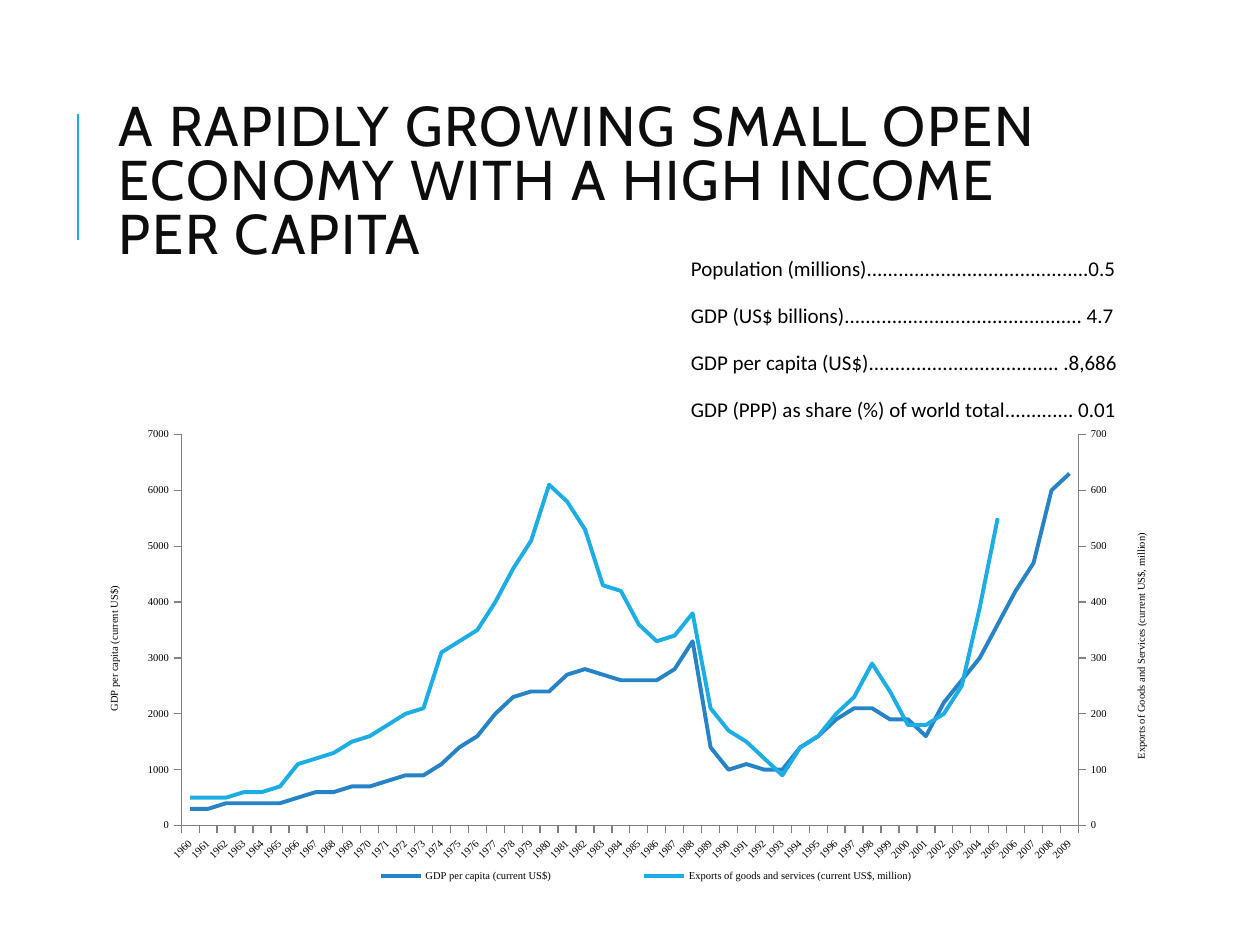
from copy import deepcopy

from lxml.etree import SubElement
from pptx import Presentation
from pptx.chart.data import CategoryChartData
from pptx.dml.color import RGBColor
from pptx.enum.chart import XL_CHART_TYPE, XL_LEGEND_POSITION, XL_TICK_MARK
from pptx.enum.shapes import MSO_CONNECTOR
from pptx.enum.text import MSO_ANCHOR, MSO_AUTO_SIZE, PP_ALIGN
from pptx.oxml.ns import qn
from pptx.util import Emu, Inches, Pt

BLACK = RGBColor(0x00, 0x00, 0x00)
INK = RGBColor(0x0D, 0x0D, 0x0D)
NAVY = RGBColor(0x00, 0x20, 0x60)
GREY = RGBColor(0x80, 0x80, 0x80)
BLUE = RGBColor(0x26, 0x83, 0xC6)
CYAN = RGBColor(0x1C, 0xAD, 0xE4)
SERIF = "Times New Roman"

FACTS = [
    "Population (millions)..........................................0.5",
    "GDP (US$ billions)............................................. 4.7",
    "GDP per capita (US$).................................... .8,686",
    "GDP (PPP) as share (%) of world total............. 0.01",
]
GDP = [300, 300, 400, 400, 400, 400, 500, 600, 600, 700,
       700, 800, 900, 900, 1100, 1400, 1600, 2000, 2300, 2400,
       2400, 2700, 2800, 2700, 2600, 2600, 2600, 2800, 3300, 1400,
       1000, 1100, 1000, 1000, 1400, 1600, 1900, 2100, 2100, 1900,
       1900, 1600, 2200, 2600, 3000, 3600, 4200, 4700, 6000, 6300]
EXPORTS = [50, 50, 50, 60, 60, 70, 110, 120, 130, 150,
           160, 180, 200, 210, 310, 330, 350, 400, 460, 510,
           610, 580, 530, 430, 420, 360, 330, 340, 380, 210,
           170, 150, 120, 90, 140, 160, 200, 230, 290, 240,
           180, 180, 200, 250, 390, 550, None, None, None, None]


def px(n):
    """Turn slide pixels into EMU."""
    return Emu(round(n * 914400 / 126))


def set_font(font, size, color=BLACK, name=SERIF, bold=False):
    """Set the look of a font."""
    font.size, font.name, font.bold = Pt(size), name, bold
    font.color.rgb = color


def write(p, text, spacing=None, **fmt):
    """Add a formatted run to a paragraph."""
    r = p.add_run()
    r.text = text
    set_font(r.font, **fmt)
    if spacing:
        r._r.get_or_add_rPr().set("spc", str(spacing))


def place(sp, box):
    """Move a shape to a pixel box."""
    sp.left, sp.top, sp.width, sp.height = map(px, box)


def add_title(s, box):
    """Fill the title and draw the accent line to its left."""
    x, y, w, h = box
    sp = s.shapes.title
    place(sp, box)
    tf = sp.text_frame
    tf.word_wrap, tf.auto_size = True, MSO_AUTO_SIZE.NONE
    tf.vertical_anchor = MSO_ANCHOR.MIDDLE
    p = tf.paragraphs[0]
    p.alignment, p.line_spacing = PP_ALIGN.LEFT, 0.8
    write(p, "A RAPIDLY GROWING SMALL OPEN ECONOMY WITH A HIGH INCOME PER CAPITA",
          size=32, color=INK, name="Cabin", spacing=100)
    line = s.shapes.add_connector(MSO_CONNECTOR.STRAIGHT, px(x - 28), px(y + 159),
                                  px(x - 28), px(y + 33))
    line.line.color.rgb, line.line.width = CYAN, Pt(1.5)
    SubElement(line._element.spPr, qn("a:effectLst"))


def add_facts(s, box):
    """Fill the body placeholder with the key figures."""
    sp = s.placeholders[1]
    place(sp, box)
    tf = sp.text_frame
    tf.word_wrap, tf.auto_size = True, MSO_AUTO_SIZE.NONE
    tf.margin_left = tf.margin_right = tf.margin_top = tf.margin_bottom = Inches(0.05)
    for i, fact in enumerate(FACTS):
        p = tf.add_paragraph() if i else tf.paragraphs[0]
        p.line_spacing, p.space_before, p.space_after = 0.9, Pt(12), Pt(2)
        pPr = p._p.get_or_add_pPr()
        pPr.set("marL", str(Inches(0.1)))
        pPr.set("indent", str(-Inches(0.1)))
        SubElement(SubElement(pPr, qn("a:buClr")), qn("a:srgbClr"), val=str(CYAN))
        SubElement(pPr, qn("a:buChar"), char=" ")
        write(p, fact, size=12, name="Calibri")


def set_layout(parent, index, **edges):
    """Give a chart part a manual layout in fractions of the chart."""
    for old in parent.findall(qn("c:layout")):
        parent.remove(old)
    layout = SubElement(parent, qn("c:layout"))
    parent.insert(index, layout)
    manual = SubElement(layout, qn("c:manualLayout"))
    if parent.tag == qn("c:plotArea"):
        SubElement(manual, qn("c:layoutTarget"), val="inner")
    for edge in "xy":
        SubElement(manual, qn(f"c:{edge}Mode"), val="edge")
    for edge, value in edges.items():
        SubElement(manual, qn(f"c:{edge}"), val=str(value))


def format_axis(axis):
    """Style the line, ticks and labels of an axis."""
    axis.has_major_gridlines = False
    axis.major_tick_mark, axis.minor_tick_mark = XL_TICK_MARK.OUTSIDE, XL_TICK_MARK.NONE
    axis.format.line.color.rgb, axis.format.line.width = GREY, Pt(0.75)
    set_font(axis.tick_labels.font, 6)


def set_val(parent, tag, value):
    """Set the val attribute of a descendant element."""
    parent.find(f".//{qn(tag)}").set("val", str(value))


def add_right_axis(plot_area, title):
    """Move the second series to a right-hand axis of its own."""
    left = plot_area.find(qn("c:lineChart"))
    cat, val = plot_area.find(qn("c:catAx")), plot_area.find(qn("c:valAx"))
    right, cat2, val2 = map(deepcopy, (left, cat, val))
    left.remove(left.findall(qn("c:ser"))[1])
    right.remove(right.find(qn("c:ser")))
    left.addnext(right)
    val.addnext(val2)
    val2.addnext(cat2)
    cat_id, val_id = 5001, 5002
    for ref, axis_id in zip(right.findall(qn("c:axId")), (cat_id, val_id)):
        ref.set("val", str(axis_id))
    for axis, own, other in ((cat2, cat_id, val_id), (val2, val_id, cat_id)):
        set_val(axis, "c:axId", own)
        set_val(axis, "c:crossAx", other)
    set_val(cat2, "c:delete", 1)
    for tag, value in (("c:axPos", "r"), ("c:crosses", "max"),
                       ("c:max", 700), ("c:majorUnit", 100)):
        set_val(val2, tag, value)
    val2.find(f".//{qn('a:t')}").text = title
    set_layout(val2.find(qn("c:title")), 1, x=0.97, y=0.23)


def add_gdp_chart(s, box):
    """Add the line chart of income and exports."""
    data = CategoryChartData()
    data.categories = [str(year) for year in range(1960, 2010)]
    data.add_series("GDP per capita (current US$)", GDP)
    data.add_series("Exports of goods and services (current US$, million)", EXPORTS)
    chart = s.shapes.add_chart(XL_CHART_TYPE.LINE, *map(px, box), data).chart
    chart.has_title = False
    set_font(chart.font, 10, NAVY)
    chart.plots[0].vary_by_categories = False
    for series, color in zip(chart.plots[0].series, (BLUE, CYAN)):
        series.smooth = False
        series.format.line.color.rgb, series.format.line.width = color, Pt(2.25)

    chart.has_legend = True
    legend = chart.legend
    legend.position, legend.include_in_layout = XL_LEGEND_POSITION.BOTTOM, False
    set_font(legend.font, 6)
    set_layout(legend._element, 1, x=0.19, y=0.92, w=0.66, h=0.05)

    years, income = chart.category_axis, chart.value_axis
    format_axis(years)
    format_axis(income)
    income.minimum_scale, income.maximum_scale, income.major_unit = 0, 7000, 1000
    tf = income.axis_title.text_frame
    write(tf.paragraphs[0], "GDP per capita (current US$)", size=6)
    plot_area = chart._chartSpace.find(f".//{qn('c:plotArea')}")
    title = plot_area.find(f".//{qn('c:valAx')}/{qn('c:title')}")
    set_layout(title, 1, x=0.02, y=0.34)
    cat = plot_area.find(qn("c:catAx"))
    for part, angle in ((title, -90), (cat, -45)):
        body = part.find(f".//{qn('a:bodyPr')}")
        body.set("rot", str(angle * 60000))
        body.set("vert", "horz")
    skip = SubElement(cat, qn("c:tickLblSkip"), val="1")
    cat.find(qn("c:noMultiLvlLbl")).addprevious(skip)
    add_right_axis(plot_area, "Exports of Goods and Services (current US$, million)")
    set_layout(plot_area, 0, x=0.09, y=0.03, w=0.83, h=0.81)


def main():
    """Build the slide and save it."""
    prs = Presentation()
    prs.slide_width, prs.slide_height = Inches(10), Inches(7.5)
    s = prs.slides.add_slide(prs.slide_layouts[1])
    add_title(s, (106, 81, 1004, 207))
    add_facts(s, (672, 252, 483, 179))
    add_gdp_chart(s, (84, 420, 1081, 483))
    prs.save("out.pptx")


if __name__ == "__main__":
    main()
